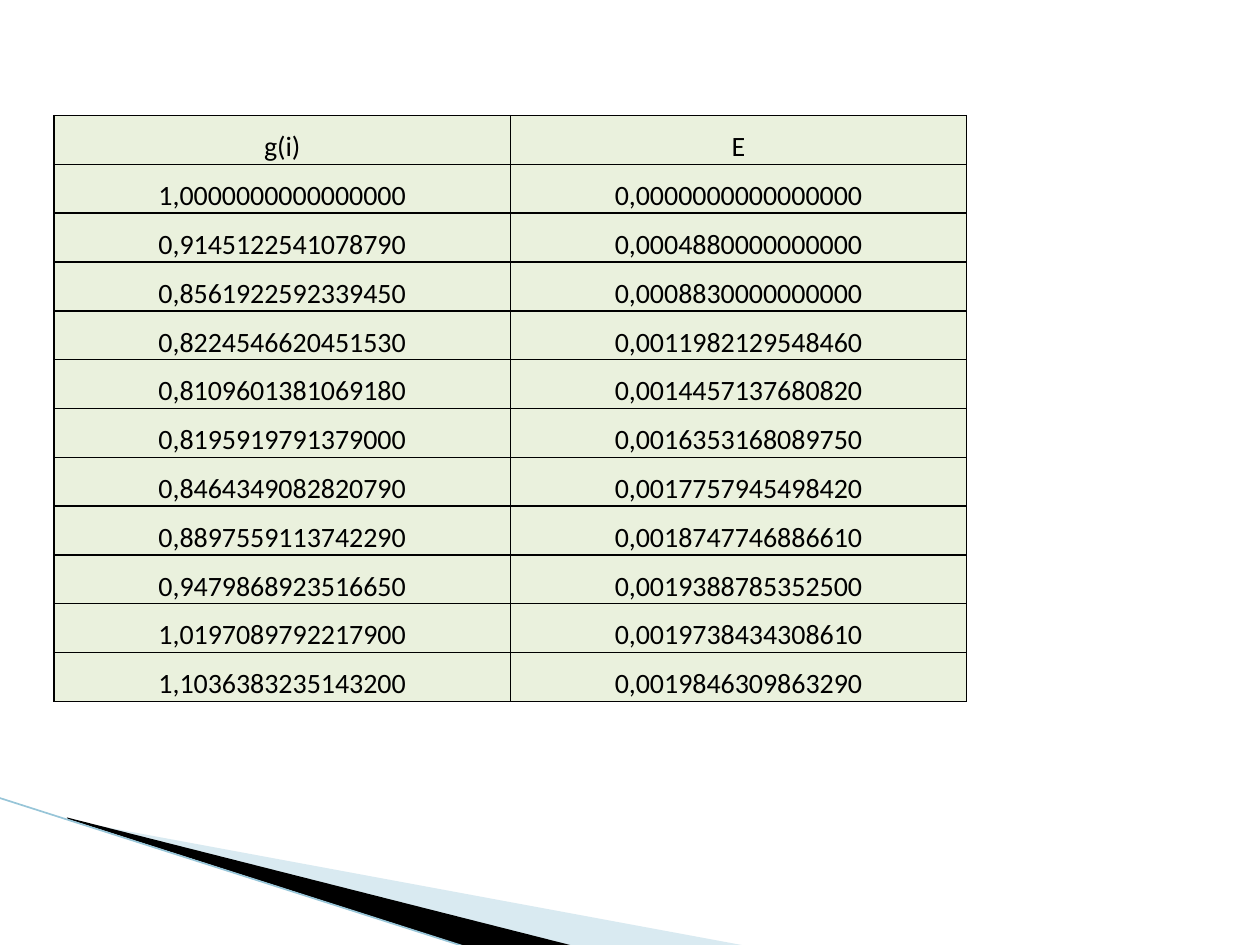
from dataclasses import dataclass

from lxml.etree import SubElement
from pptx import Presentation
from pptx.dml.color import RGBColor
from pptx.enum.shapes import MSO_CONNECTOR
from pptx.enum.text import MSO_ANCHOR, PP_ALIGN
from pptx.oxml.ns import qn
from pptx.util import Cm, Pt


@dataclass(frozen=True)
class Theme:
    """Colours, font and sizes of the slide."""
    font: str = "Calibri"
    text_size: float = 16
    text: str = "000000"
    cell: str = "EAF1DD"
    border: str = "000000"
    border_width: float = 1
    pale_band: str = "A0CBDC"
    pale_alpha: int = 40
    dark_band: str = "000000"
    edge: str = "97C5D8"
    edge_width: float = 0.95


THEME = Theme()

RESULTS = [
    ("g(i)", "E"),
    ("1,0000000000000000", "0,0000000000000000"),
    ("0,9145122541078790", "0,0004880000000000"),
    ("0,8561922592339450", "0,0008830000000000"),
    ("0,8224546620451530", "0,0011982129548460"),
    ("0,8109601381069180", "0,0014457137680820"),
    ("0,8195919791379000", "0,0016353168089750"),
    ("0,8464349082820790", "0,0017757945498420"),
    ("0,8897559113742290", "0,0018747746886610"),
    ("0,9479868923516650", "0,0019388785352500"),
    ("1,0197089792217900", "0,0019738434308610"),
    ("1,1036383235143200", "0,0019846309863290"),
]


def write(frame, text, size=THEME.text_size, color=THEME.text,
          align=PP_ALIGN.CENTER, spacing=1.15):
    """Put formatted text into a text frame."""
    paragraph = frame.paragraphs[0]
    paragraph.alignment = align
    paragraph.line_spacing = spacing
    run = paragraph.add_run()
    run.text = text
    run.font.name = THEME.font
    run.font.size = Pt(size)
    run.font.color.rgb = RGBColor.from_string(color)


def outline_cell(cell):
    """Draw the four borders of a table cell."""
    properties = cell._tc.get_or_add_tcPr()
    for position, side in enumerate(("a:lnL", "a:lnR", "a:lnT", "a:lnB")):
        border = SubElement(properties, qn(side), w=str(Pt(THEME.border_width)))
        fill = SubElement(border, qn("a:solidFill"))
        SubElement(fill, qn("a:srgbClr"), val=THEME.border)
        properties.insert(position, border)


def add_band(slide, left, top, points, color, alpha=100):
    """Draw a filled wedge from points relative to the box corner."""
    corners = [(Cm(left + x), Cm(top + y)) for x, y in points]
    builder = slide.shapes.build_freeform(*corners[0])
    builder.add_line_segments(corners[1:], close=True)
    band = builder.convert_to_shape()
    band.shadow.inherit = False
    band.line.fill.background()
    band.fill.solid()
    band.fill.fore_color.rgb = RGBColor.from_string(color)
    if alpha < 100:
        tint = band._element.spPr.find(".//" + qn("a:srgbClr"))
        SubElement(tint, qn("a:alpha"), val=str(alpha * 1000))


def add_corner_decoration(slide, left, top, width, height):
    """Place the two wedges and the edge line at the bottom left."""
    add_band(slide, left, top,
             [(1.43, 0.46), (15.14, 3), (11.61, 3), (1.43, 0.43)],
             THEME.pale_band, THEME.pale_alpha)
    add_band(slide, left, top,
             [(1.38, 0.4), (11.64, 3), (9.48, height), (1.4, 0.43)],
             THEME.dark_band)
    edge = slide.shapes.add_connector(
        MSO_CONNECTOR.STRAIGHT, Cm(left), Cm(top),
        Cm(left + width), Cm(top + height))
    edge.line.color.rgb = RGBColor.from_string(THEME.edge)
    edge.line.width = Pt(THEME.edge_width)
    SubElement(edge._element.spPr, qn("a:effectLst"))


def add_results_table(slide, left, top, width, height):
    """Place the table of results with equal rows and columns."""
    row_count, column_count = len(RESULTS), len(RESULTS[0])
    table = slide.shapes.add_table(
        row_count, column_count, Cm(left), Cm(top), Cm(width), Cm(height)).table
    table.first_row = table.horz_banding = False
    for column in table.columns:
        column.width = Cm(width / column_count)
    for row, values in zip(table.rows, RESULTS):
        row.height = Cm(height / row_count)
        for cell, value in zip(row.cells, values):
            cell.margin_left = cell.margin_right = Cm(0.18)
            cell.margin_top = cell.margin_bottom = 0
            cell.vertical_anchor = MSO_ANCHOR.BOTTOM
            cell.fill.solid()
            cell.fill.fore_color.rgb = RGBColor.from_string(THEME.cell)
            outline_cell(cell)
            write(cell.text_frame, value)


def main():
    """Build and save the slide."""
    deck = Presentation()
    deck.slide_width, deck.slide_height = Cm(25.4), Cm(19.05)
    slide = deck.slides.add_slide(deck.slide_layouts[6])
    add_corner_decoration(slide, -0.03, 16.08, 9.45, 3.02)
    add_results_table(slide, 1.09, 2.33, 18.4, 11.81)
    deck.save("out.pptx")


if __name__ == "__main__":
    main()
